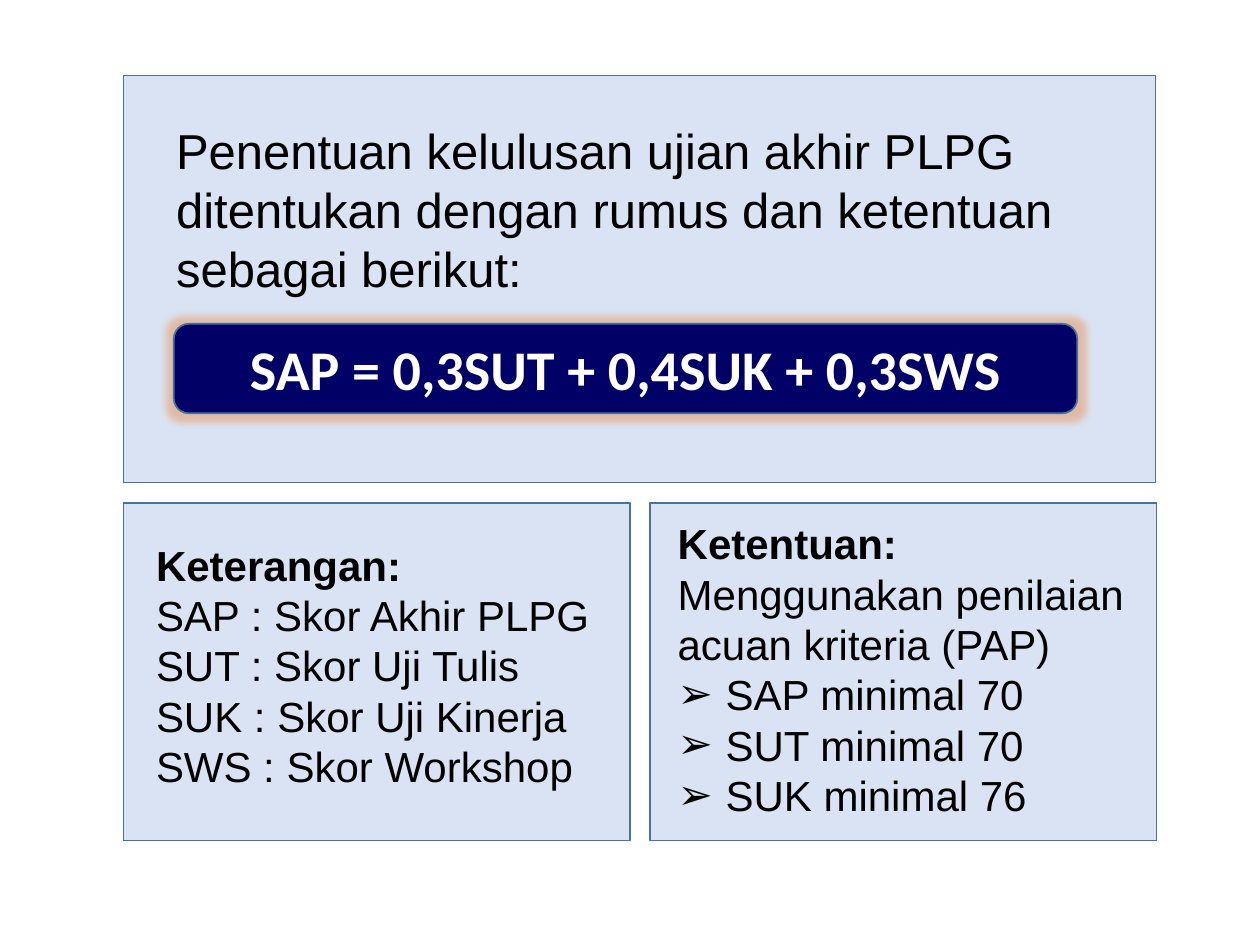
import pptx
import pptx.util
import pptx.dml.color
import pptx.enum.shapes
import pptx.enum.text
import pptx.oxml
import pptx.oxml.ns
from lxml import etree

Inches = pptx.util.Inches
Pt = pptx.util.Pt
SHAPES = pptx.enum.shapes.MSO_SHAPE
COLORS = {
    "panel": "DAE3F3",
    "border": "43739E",
    "formula": "000066",
    "glow": "ED7D31",
    "text": "000000",
    "formula_text": "FFFFFF",
}

presentation = pptx.Presentation()
presentation.slide_width = Inches(10)
presentation.slide_height = Inches(7.5)
slide = presentation.slides.add_slide(presentation.slide_layouts[6])


def rgb(name):
    return pptx.dml.color.RGBColor.from_string(COLORS[name])


def add_run(paragraph, text, size, font="Arial", color="text", bold=False):
    run = paragraph.add_run()
    run.text = text
    run.font.size = Pt(size)
    run.font.name = font
    run.font.bold = bold
    run.font.color.rgb = rgb(color)


# Three panels and the formula bar
boxes = [
    (SHAPES.RECTANGLE, 0.98, 0.6, 8.19, 3.23, "panel"),
    (SHAPES.RECTANGLE, 0.98, 3.99, 4.02, 2.68, "panel"),
    (SHAPES.RECTANGLE, 5.16, 3.99, 4.02, 2.68, "panel"),
    (SHAPES.ROUNDED_RECTANGLE, 1.38, 2.57, 7.17, 0.71, "formula"),
]
for kind, left, top, width, height, fill in boxes:
    shape = slide.shapes.add_shape(
        kind, Inches(left), Inches(top), Inches(width), Inches(height))
    shape.shadow.inherit = False
    shape.fill.solid()
    shape.fill.fore_color.rgb = rgb(fill)
    shape.line.color.rgb = rgb("border")
    shape.line.width = Pt(1)

# Formula text and orange glow on the last box
formula = shape
formula.text_frame.vertical_anchor = pptx.enum.text.MSO_ANCHOR.MIDDLE
paragraph = formula.text_frame.paragraphs[0]
paragraph.alignment = pptx.enum.text.PP_ALIGN.CENTER
add_run(paragraph, "SAP = 0,3SUT + 0,4SUK + 0,3SWS", 32, "Calibri", "formula_text", True)

qn = pptx.oxml.ns.qn
effects = formula.element.spPr.find(qn("a:effectLst"))
glow = etree.SubElement(effects, qn("a:glow"), rad=str(Pt(8)))
glow_color = etree.SubElement(glow, qn("a:srgbClr"), val=COLORS["glow"])
etree.SubElement(glow_color, qn("a:alpha"), val="40000")

# Text blocks: place, size, heading, lines, bulleted lines, hanging indent
blocks = [
    (1.14, 4.23, 3.86, 2.12, 24, ["Keterangan:"],
     ["SAP : Skor Akhir PLPG", "SUT : Skor Uji Tulis",
      "SUK : Skor Uji Kinerja", "SWS : Skor Workshop"], [], False),
    (5.16, 4.06, 4.02, 2.83, 24, ["Ketentuan:"],
     ["Menggunakan penilaian", "acuan kriteria (PAP)"],
     ["SAP minimal 70", "SUT minimal 70", "SUK minimal 76"], True),
    (1.3, 0.91, 7.24, 1.52, 28, [],
     ["Penentuan kelulusan ujian akhir PLPG ditentukan dengan rumus "
      "dan ketentuan sebagai berikut:"], [], False),
]
for left, top, width, height, size, heading, lines, bullets, hanging in blocks:
    text_box = slide.shapes.add_textbox(
        Inches(left), Inches(top), Inches(width), Inches(height))
    frame = text_box.text_frame
    frame.word_wrap = True
    frame.auto_size = pptx.enum.text.MSO_AUTO_SIZE.SHAPE_TO_FIT_TEXT
    for index, text in enumerate(heading + lines + bullets):
        paragraph = frame.add_paragraph() if index else frame.paragraphs[0]
        add_run(paragraph, text, size, bold=text in heading)
        if hanging:
            properties = paragraph._p.get_or_add_pPr()
            properties.set("marL", str(Inches(0.5)))
            properties.set("indent", str(Inches(-0.38)))
            if text in bullets:
                etree.SubElement(properties, qn("a:buFont"), typeface="Arial")
                etree.SubElement(properties, qn("a:buChar"), char="➢")
            else:
                etree.SubElement(properties, qn("a:buNone"))

presentation.save("out.pptx")
